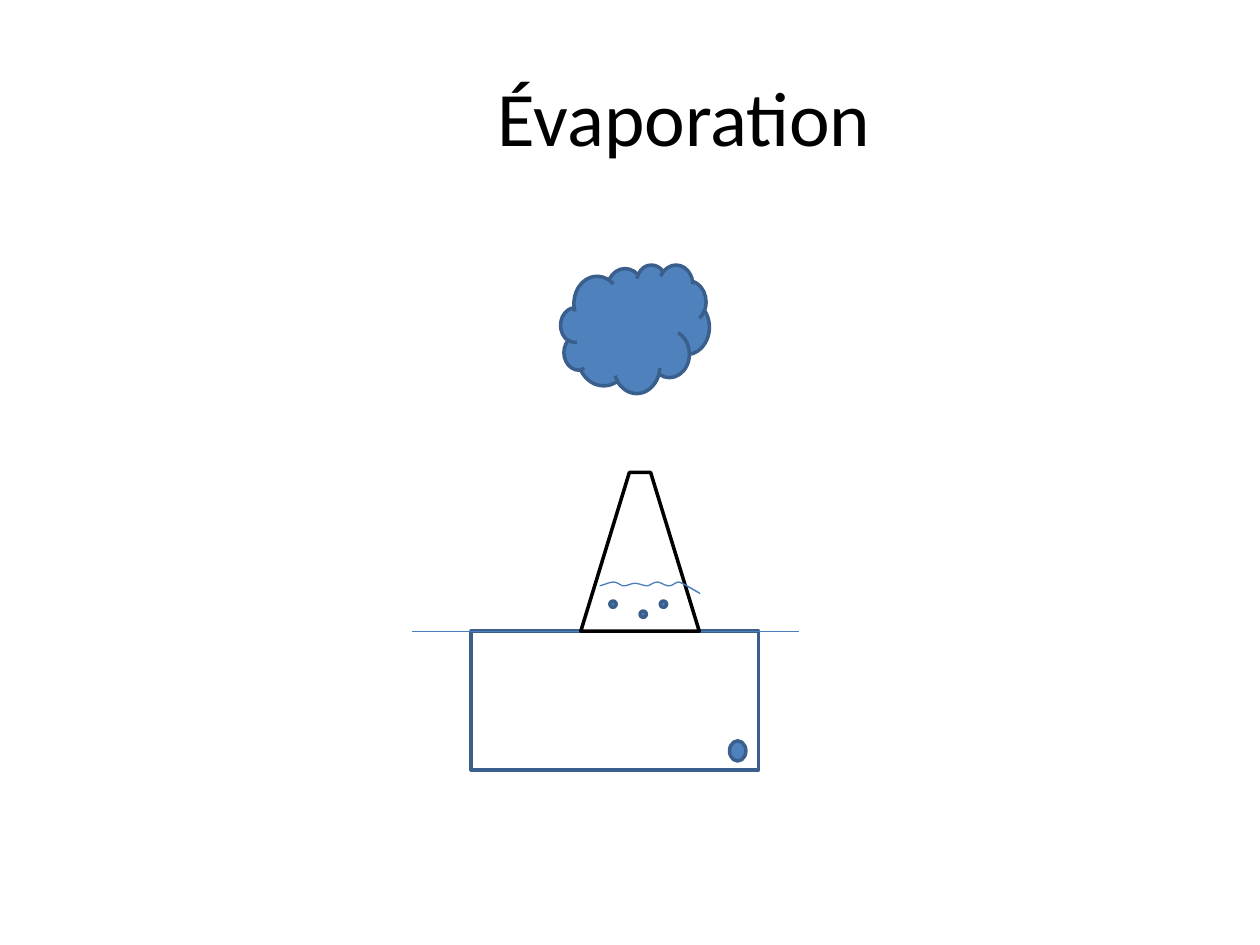
from lxml import etree
from pptx import Presentation
from pptx.dml.color import RGBColor
from pptx.enum.shapes import MSO_CONNECTOR, MSO_SHAPE
from pptx.enum.text import MSO_ANCHOR, PP_ALIGN
from pptx.oxml.ns import qn
from pptx.util import Inches, Pt

RECT, DOT = MSO_SHAPE.RECTANGLE, MSO_SHAPE.FLOWCHART_CONNECTOR
TRAPEZOID, CLOUD = MSO_SHAPE.TRAPEZOID, MSO_SHAPE.CLOUD
STRAIGHT = MSO_CONNECTOR.STRAIGHT
MIDDLE, CENTER = MSO_ANCHOR.MIDDLE, PP_ALIGN.CENTER

THEME = {
    "font": "Calibri",
    "title": Pt(44),
    "thick": Pt(2),
    "thin": Pt(0.75),
    "black": RGBColor.from_string("000000"),
    "white": RGBColor.from_string("FFFFFF"),
    "water": RGBColor.from_string("4F81BD"),
    "edge": RGBColor.from_string("3A5F8C"),
    "stroke": RGBColor.from_string("4B7EBC"),
}


def add_outlined(kind, x, y, w, h, fill, line="edge"):
    sp = s.shapes.add_shape(kind, Inches(x), Inches(y), Inches(w), Inches(h))
    sp.shadow.inherit = False
    sp.fill.solid()
    sp.fill.fore_color.rgb = THEME[fill]
    sp.line.color.rgb = THEME[line]
    sp.line.width = THEME["thick"]
    return sp


prs = Presentation()
prs.slide_width, prs.slide_height = Inches(10), Inches(7.5)
s = prs.slides.add_slide(prs.slide_layouts[6])

title = s.shapes.add_textbox(Inches(1), Inches(0.29), Inches(9), Inches(1.25))
tf = title.text_frame
tf.word_wrap = True
tf.vertical_anchor = MIDDLE
p = tf.paragraphs[0]
p.text = "Évaporation "
p.alignment = CENTER
p.font.name = THEME["font"]
p.font.size = THEME["title"]
p.font.color.rgb = THEME["black"]

add_outlined(RECT, 3.74, 5.01, 2.28, 1.1, "white")

ground = s.shapes.add_connector(STRAIGHT, Inches(3.27), Inches(5.01), Inches(6.34), Inches(5.01))
ground.line.color.rgb = THEME["stroke"]
ground.line.width = THEME["thin"]
etree.SubElement(ground._element.spPr, qn("a:effectLst"))

add_outlined(DOT, 5.79, 5.88, 0.13, 0.16, "water")

flask = add_outlined(TRAPEZOID, 4.61, 3.75, 0.94, 1.26, "white", "black")
flask.adjustments[0] = 0.41

wave_start = (4.76, 4.65)
wave_curves = [
    ((4.8, 4.64), (4.84, 4.62), (4.87, 4.62)),
    ((4.9, 4.62), (4.93, 4.65), (4.95, 4.65)),
    ((4.98, 4.65), (5.01, 4.63), (5.04, 4.63)),
    ((5.07, 4.63), (5.11, 4.65), (5.14, 4.65)),
    ((5.17, 4.64), (5.19, 4.62), (5.22, 4.62)),
    ((5.24, 4.62), (5.28, 4.65), (5.31, 4.65)),
    ((5.34, 4.65), (5.36, 4.62), (5.39, 4.62)),
    ((5.41, 4.62), (5.71, 4.8), (5.45, 4.65)),
]
steps = 12
points = []
a = wave_start
for b, c, d in wave_curves:
    for i in range(1, steps + 1):
        t = i / steps
        u = 1 - t
        points.append(tuple(
            Inches(u**3 * a[k] + 3 * u * u * t * b[k] + 3 * u * t * t * c[k] + t**3 * d[k])
            for k in (0, 1)
        ))
    a = d
fb = s.shapes.build_freeform(Inches(wave_start[0]), Inches(wave_start[1]))
fb.add_line_segments(points, close=False)
wave = fb.convert_to_shape()
wave.shadow.inherit = False
wave.fill.background()
wave.line.color.rgb = THEME["stroke"]
wave.line.width = THEME["thin"]

for x, y in [(5.08, 4.85), (5.24, 4.77), (4.84, 4.77)]:
    add_outlined(DOT, x, y, 0.05, 0.05, "water")

add_outlined(CLOUD, 4.45, 2.1, 1.18, 1.02, "water")

prs.save("out.pptx")
